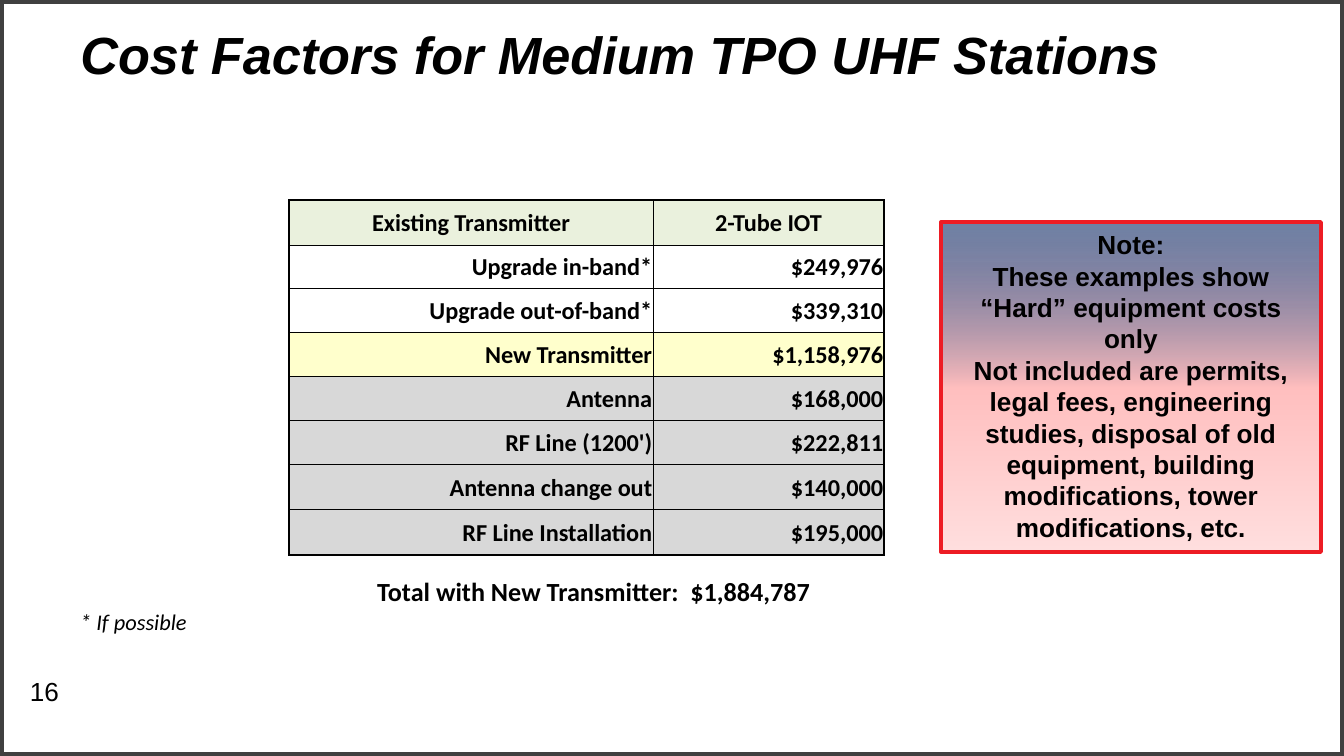
from lxml import etree
from pptx import Presentation
from pptx.dml.color import RGBColor
from pptx.enum import shapes, text
from pptx.oxml import ns
from pptx.util import Emu, Pt

# Content
TITLE = "Cost Factors for Medium TPO UHF Stations"
HEADER, PLAIN, NEW, SITE = "EAF1DD", "FFFFFF", "FFFFCC", "D8D8D8"
COSTS = [
    ("Existing Transmitter", "2-Tube IOT", HEADER),
    ("Upgrade in-band*", "$249,976", PLAIN),
    ("Upgrade out-of-band*", "$339,310", PLAIN),
    ("New Transmitter", "$1,158,976", NEW),
    ("Antenna", "$168,000", SITE),
    ("RF Line (1200')", "$222,811", SITE),
    ("Antenna change out", "$140,000", SITE),
    ("RF Line Installation", "$195,000", SITE),
]
NOTE = [
    "Note:",
    "These examples show “Hard” equipment costs only",
    "Not included are permits, legal fees, engineering studies, disposal of old "
    "equipment, building modifications, tower modifications, etc.",
]
NOTE_STOPS = [(0, "002060", 56), (50, "FFBEBE", 100), (100, "FFDFDF", 100)]
# wording, box in px, font, size, bold, italic, centred
LABELS = [
    ("16", (11, 669, 67, 46), "Arial", 14, False, False, True),
    ("* If possible", (67, 602, 336, 40), "Calibri", 12, False, True, False),
    ("Total with New Transmitter:  $1,884,787", (280, 569, 628, 46),
     "Calibri", 14, True, False, True),
]

BLACK = RGBColor(0, 0, 0)
FRAME_GREY = RGBColor(0x40, 0x40, 0x40)
NOTE_RED = RGBColor(0xED, 0x1C, 0x24)

# Layout in px; the table has an empty margin row and column on every side
SLIDE = (1344, 756)
TITLE_BOX = (67, 16, 1210, 75)
NOTE_BOX = (941, 222, 380, 330)
TABLE_LEFT, TABLE_TOP = 246, 155
COLUMNS = [43, 364, 231, 30]
ROWS = [45, 45, 44, 44, 44, 44, 44, 45, 45, 46]


def px(value):
    return Emu(round(value * 914400 / 134.4))


def box(lengths):
    return [px(length) for length in lengths]


def write(paragraph, words, font, size, bold=False, italic=False, align=None):
    paragraph.alignment = align
    run = paragraph.add_run()
    run.text = words
    run.font.name, run.font.size = font, Pt(size)
    run.font.bold, run.font.italic = bold, italic
    run.font.color.rgb = BLACK


def add_border(cell, side, points):
    properties = cell._tc.get_or_add_tcPr()
    line = etree.Element(ns.qn("a:ln" + side), w=str(Pt(points)))
    if points:
        fill = etree.SubElement(line, ns.qn("a:solidFill"))
        etree.SubElement(fill, ns.qn("a:srgbClr"), val=str(BLACK))
    else:
        etree.SubElement(line, ns.qn("a:noFill"))
    properties.append(line)


def add_rectangle(slide, lengths, line_color, line_points):
    shape = slide.shapes.add_shape(shapes.MSO_SHAPE.RECTANGLE, *box(lengths))
    shape.shadow.inherit = False
    shape.line.color.rgb, shape.line.width = line_color, Pt(line_points)
    return shape


def add_cost_table(slide):
    frame = slide.shapes.add_table(
        len(ROWS), len(COLUMNS), px(TABLE_LEFT), px(TABLE_TOP),
        px(sum(COLUMNS)), px(sum(ROWS)))
    table = frame.table
    table.first_row = table.horz_banding = False
    for column, width in zip(table.columns, COLUMNS):
        column.width = px(width)
    for row, height in zip(table.rows, ROWS):
        row.height = px(height)

    last = len(COSTS)

    def inside(r, c):
        return 1 <= r <= last and c in (1, 2)

    for r in range(len(ROWS)):
        for c in range(len(COLUMNS)):
            cell = table.cell(r, c)
            cell.margin_left = cell.margin_right = cell.margin_top = px(1)
            cell.margin_bottom = 0
            cell.vertical_anchor = text.MSO_ANCHOR.MIDDLE
            # Thick line around the block, thin lines within, none elsewhere
            neighbours = {"L": (r, c - 1), "R": (r, c + 1),
                          "T": (r - 1, c), "B": (r + 1, c)}
            for side, neighbour in neighbours.items():
                count = inside(r, c) + inside(*neighbour)
                add_border(cell, side, (0, 1, 0.5)[count])
            cell.fill.solid()
            color = COSTS[r - 1][2] if inside(r, c) else PLAIN
            cell.fill.fore_color.rgb = RGBColor.from_string(color)
            paragraph = cell.text_frame.paragraphs[0]
            paragraph.font.size = Pt(13)
            if inside(r, c):
                align = text.PP_ALIGN.CENTER if r == 1 else text.PP_ALIGN.RIGHT
                write(paragraph, COSTS[r - 1][c - 1], "Calibri", 13, True, align=align)


def add_note(slide):
    note = add_rectangle(slide, NOTE_BOX, NOTE_RED, 2)
    note.fill.gradient()
    note.fill.gradient_angle = 270
    stops = note._element.spPr.find(".//" + ns.qn("a:gsLst"))
    for stop in list(stops):
        stops.remove(stop)
    for position, color, opacity in NOTE_STOPS:
        stop = etree.SubElement(stops, ns.qn("a:gs"), pos=str(position * 1000))
        rgb = etree.SubElement(stop, ns.qn("a:srgbClr"), val=color)
        if opacity < 100:
            etree.SubElement(rgb, ns.qn("a:alpha"), val=str(opacity * 1000))
    frame = note.text_frame
    frame.word_wrap = True
    frame.vertical_anchor = text.MSO_ANCHOR.TOP
    for index, words in enumerate(NOTE):
        paragraph = frame.add_paragraph() if index else frame.paragraphs[0]
        write(paragraph, words, "Arial", 14, True, align=text.PP_ALIGN.CENTER)


def main():
    presentation = Presentation()
    presentation.slide_width, presentation.slide_height = box(SLIDE)
    slide = presentation.slides.add_slide(presentation.slide_layouts[5])

    # Title
    title = slide.shapes.title
    title.left, title.top, title.width, title.height = box(TITLE_BOX)
    title.text_frame.vertical_anchor = text.MSO_ANCHOR.MIDDLE
    write(title.text_frame.paragraphs[0], TITLE, "Arial", 28, True, True,
          text.PP_ALIGN.LEFT)

    # Slide frame
    add_rectangle(slide, (0, 0, *SLIDE), FRAME_GREY, 4.5).fill.background()

    add_cost_table(slide)
    add_note(slide)

    # Page number, footnote and total
    for words, lengths, font, size, bold, italic, centred in LABELS:
        frame = slide.shapes.add_textbox(*box(lengths)).text_frame
        frame.word_wrap = True
        align = text.PP_ALIGN.CENTER if centred else text.PP_ALIGN.LEFT
        write(frame.paragraphs[0], words, font, size, bold, italic, align)

    presentation.save("out.pptx")


if __name__ == "__main__":
    main()
